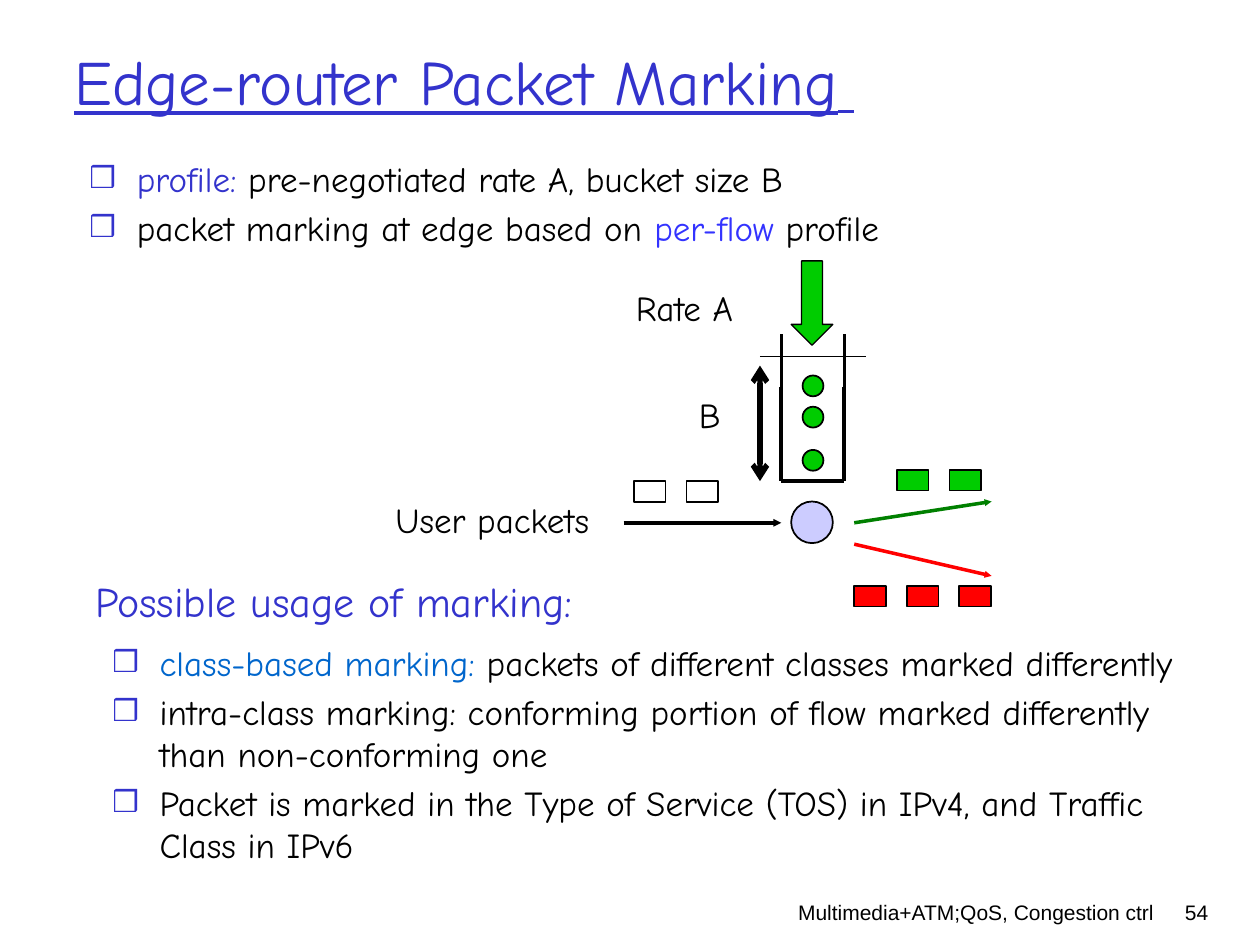
"""Build the slide on packet marking at the edge router."""
from dataclasses import dataclass

from lxml import etree
from pptx import Presentation
from pptx import util as u
from pptx.dml.color import RGBColor
from pptx.enum import shapes, text
from pptx.oxml import ns


@dataclass(frozen=True)
class Theme:
    """Colours, fonts and type sizes of the slide."""

    ink: str = "000000"
    accent: str = "3333CC"
    flow: str = "3333FF"
    usage: str = "0066CC"
    white: str = "FFFFFF"
    token: str = "00CC00"
    marked: str = "008000"
    excess: str = "FF0000"
    marker: str = "CCCCFF"
    hand: str = "Comic Neue"
    plain: str = "Arial"
    title: int = 36
    title_end: int = 28
    heading: int = 24
    body: int = 20
    footer: int = 12


class SlideBuilder:
    """Hold the theme and the current page and add elements to it."""

    def __init__(self, page, theme):
        """Keep the page and its theme."""
        self.page = page
        self.theme = theme

    def span(self, para, words, size, color=None, **font):
        """Add one formatted run to a paragraph."""
        span = para.add_run()
        span.text = words
        span.font.color.rgb = RGBColor.from_string(color or self.theme.ink)
        formats = {"size": u.Pt(size), "name": self.theme.hand} | font
        for name, value in formats.items():
            setattr(span.font, name, value)

    def frame(self, box, anchor=text.MSO_ANCHOR.TOP):
        """Make a text frame wrap at a fixed size."""
        formats = {
            "word_wrap": True,
            "auto_size": text.MSO_AUTO_SIZE.NONE,
            "vertical_anchor": anchor,
        }
        for name, value in formats.items():
            setattr(box.text_frame, name, value)
        return box.text_frame.paragraphs[0]

    def holder(self, index, left, top, width, height):
        """Move a template placeholder into place."""
        box = self.page.placeholders[index]
        place = {"left": left, "top": top, "width": width, "height": height}
        for name, value in place.items():
            setattr(box, name, u.Cm(value))
        return box

    def title(self, words, *place):
        """Fill the title placeholder with an underlined heading."""
        para = self.frame(self.holder(0, *place), text.MSO_ANCHOR.MIDDLE)
        para.alignment = text.PP_ALIGN.LEFT
        for part, size in ((words, self.theme.title), (" ", self.theme.title_end)):
            self.span(para, part, size, self.theme.accent, underline=True)

    def bullet(self, para):
        """Give a paragraph the square bullet."""
        props = para._p.get_or_add_pPr()
        color = etree.SubElement(props, ns.qn("a:buClr"))
        etree.SubElement(color, ns.qn("a:srgbClr"), val=self.theme.accent)
        etree.SubElement(props, ns.qn("a:buSzPct"), val="85000")
        etree.SubElement(props, ns.qn("a:buChar"), char="❒")

    def bullets(self, index, items, *place):
        """Fill a body placeholder with a list of coloured runs."""
        box = self.holder(index, *place)
        first = self.frame(box)
        for number, item in enumerate(items):
            para = box.text_frame.add_paragraph() if number else first
            self.bullet(para)
            for words, color in item:
                self.span(para, words, self.theme.body, color)

    def label(self, words, place, size, color=None, align=None, **font):
        """Add a text box with one line."""
        box = self.page.shapes.add_textbox(*map(u.Cm, place))
        para = self.frame(box)
        para.alignment = align
        self.span(para, words, size, color, **font)

    def shape(self, kind, fill, *place, weight=1):
        """Add an outlined preset shape."""
        box = self.page.shapes.add_shape(kind, *map(u.Cm, place))
        box.shadow.inherit = False
        box.fill.solid()
        box.fill.fore_color.rgb = RGBColor.from_string(fill)
        box.line.color.rgb = RGBColor.from_string(self.theme.ink)
        box.line.width = u.Pt(weight)

    def packets(self, count, fill, left, top):
        """Add a row of evenly spaced packets."""
        for number in range(count):
            x = left + 1.06 * number
            self.shape(shapes.MSO_SHAPE.RECTANGLE, fill, x, top, 0.64, 0.42)

    def line(self, *ends, color=None, weight=2.25, heads=(), size="sm"):
        """Add a straight line with optional (end, type) arrowheads."""
        line = self.page.shapes.add_connector(
            shapes.MSO_CONNECTOR.STRAIGHT, *map(u.Cm, ends))
        line.line.color.rgb = RGBColor.from_string(color or self.theme.ink)
        line.line.width = u.Pt(weight)
        props = line._element.spPr
        outline = props.find(ns.qn("a:ln"))
        for end, kind in heads:
            etree.SubElement(outline, ns.qn(f"a:{end}"), type=kind, w=size, len=size)
        etree.SubElement(props, ns.qn("a:effectLst"))


def draw_bucket(builder):
    """Draw the token bucket with its rate and depth."""
    theme, preset = builder.theme, shapes.MSO_SHAPE
    left, right, rim, middle, floor = 15.75, 17.02, 6.73, 7.8, 9.7
    for x in (left, right):
        builder.line(x, middle, x, floor)
        builder.line(x, middle, x, rim, weight=2)
    builder.line(left, floor, right, floor)
    for top in (7.57, 8.2, 9.07):
        builder.shape(preset.OVAL, theme.token, 16.18, top, 0.42, 0.42)
    builder.shape(preset.DOWN_ARROW, theme.token, 15.95, 5.26, 0.84, 1.7, weight=0.75)
    builder.line(15.32, 7.19, 17.45, 7.19, weight=0.75)
    builder.line(15.32, 7.37, 15.32, floor, weight=3, size="med",
                 heads=(("headEnd", "arrow"), ("tailEnd", "arrow")))
    builder.label("Rate A", (12.57, 5.66, 3.18, 1.09), theme.body)
    builder.label("B", (13.84, 7.8, 0.97, 1.09), theme.body)


def draw_flow(builder):
    """Draw user packets passing the marker and leaving marked."""
    theme = builder.theme
    builder.label("User packets", (7.72, 9.93, 5.92, 1.09), theme.body)
    builder.shape(shapes.MSO_SHAPE.OVAL, theme.marker, 15.95, 10.11, 0.84, 0.84)
    for count, fill, left, top in (
        (2, theme.white, 12.78, 9.7),
        (2, theme.token, 18.08, 9.47),
        (3, theme.excess, 17.22, 11.81),
    ):
        builder.packets(count, fill, left, top)
    for ends, color, weight in (
        ((12.57, 10.54, 15.75, 10.54), theme.ink, 2.25),
        ((17.22, 10.54, 19.99, 10.11), theme.marked, 2),
        ((17.22, 10.97, 19.99, 11.61), theme.excess, 2),
    ):
        builder.line(*ends, color=color, weight=weight, heads=(("tailEnd", "triangle"),))


def main():
    """Build and save the deck."""
    deck = Presentation()
    deck.slide_width, deck.slide_height = u.Cm(25.4), u.Cm(19.05)
    theme = Theme()
    builder = SlideBuilder(deck.slides.add_slide(deck.slide_layouts[3]), theme)
    builder.title("Edge-router Packet Marking", 1.24, 0.66, 21.59, 1.9)
    builder.bullets(1, (
        (("profile: ", theme.accent),
         ("pre-negotiated rate A, bucket size B", theme.ink)),
        (("packet marking at edge based on ", theme.ink),
         ("per-flow", theme.flow), (" profile", theme.ink)),
    ), 1.55, 3.05, 22.23, 2.54)
    builder.bullets(2, (
        (("class-based marking:", theme.usage),
         (" packets of different classes marked differently", theme.ink)),
        (("intra-class marking: conforming portion of flow marked differently "
          "than non-conforming one", theme.ink),),
        (("Packet is marked in the Type of Service (TOS) in IPv4, "
          "and Traffic Class in IPv6", theme.ink),),
    ), 2.01, 12.8, 22.86, 5.08)
    builder.label("Possible usage of marking:", (1.68, 11.48, 12.5, 1.27),
                  theme.heading, theme.accent)
    draw_bucket(builder)
    draw_flow(builder)
    for words, left, width in (
        ("Multimedia+ATM;QoS, Congestion ctrl", 15.47, 8.05),
        ("54", 22.73, 1.88),
    ):
        builder.label(words, (left, 18.01, width, 1.27), theme.footer,
                      align=text.PP_ALIGN.RIGHT, name=theme.plain)
    deck.save("out.pptx")


if __name__ == "__main__":
    main()
